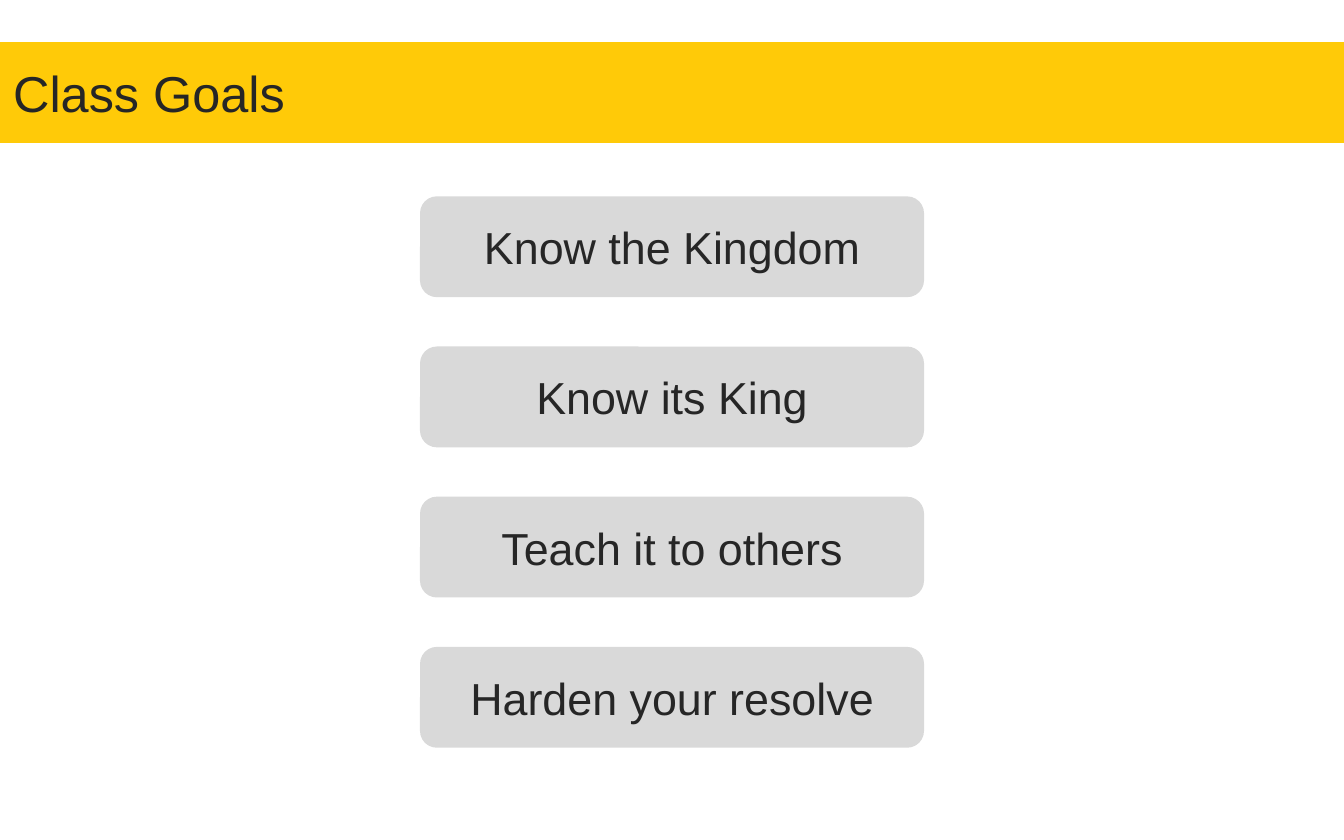
import pptx
import pptx.dml.color
import pptx.enum.shapes
import pptx.enum.text
import pptx.slide
import pptx.util
from dataclasses import dataclass

Pt = pptx.util.Pt
RGB = pptx.dml.color.RGBColor
Shape = pptx.enum.shapes.MSO_SHAPE
Align = pptx.enum.text.PP_ALIGN


@dataclass(frozen=True)
class Theme:
    font: str = "Arial"
    ink: RGB = RGB(0x26, 0x26, 0x26)
    banner: RGB = RGB(0xFF, 0xCA, 0x08)
    card: RGB = RGB(0xD9, 0xD9, 0xD9)
    title_size: float = 27
    goal_size: float = 24


@dataclass(frozen=True)
class Box:
    text: str
    left: float
    top: float
    width: float
    height: float
    kind: Shape
    fill: RGB
    size: float
    align: Align


THEME = Theme()
SLIDE_W, SLIDE_H = 720, 450
BOX_H = 54
BANNER_TOP = 22.5
GOAL_W, GOAL_TOP, GOAL_PITCH = 270, 105.2, 80.45
GOALS = ["Know the Kingdom", "Know its King", "Teach it to others", "Harden your resolve"]


def draw_box(slide: pptx.slide.Slide, box: Box) -> None:
    sp = slide.shapes.add_shape(
        box.kind, Pt(box.left), Pt(box.top), Pt(box.width), Pt(box.height)
    )
    sp.shadow.inherit = False
    sp.fill.solid()
    sp.fill.fore_color.rgb = box.fill
    sp.line.fill.background()
    tf = sp.text_frame
    tf.word_wrap = True
    tf.vertical_anchor = pptx.enum.text.MSO_ANCHOR.MIDDLE
    p = tf.paragraphs[0]
    p.text = box.text
    p.alignment = box.align
    p.font.name = THEME.font
    p.font.size = Pt(box.size)
    p.font.color.rgb = THEME.ink


def main() -> None:
    prs = pptx.Presentation()
    prs.slide_width, prs.slide_height = Pt(SLIDE_W), Pt(SLIDE_H)
    s = prs.slides.add_slide(prs.slide_layouts[6])
    banner = Box("Class Goals", 0, BANNER_TOP, SLIDE_W, BOX_H, Shape.RECTANGLE,
                 THEME.banner, THEME.title_size, Align.LEFT)
    cards = [
        Box(goal, (SLIDE_W - GOAL_W) / 2, GOAL_TOP + i * GOAL_PITCH, GOAL_W, BOX_H,
            Shape.ROUNDED_RECTANGLE, THEME.card, THEME.goal_size, Align.CENTER)
        for i, goal in enumerate(GOALS)
    ]
    for box in [banner, *cards]:
        draw_box(s, box)
    prs.save("out.pptx")


if __name__ == "__main__":
    main()
